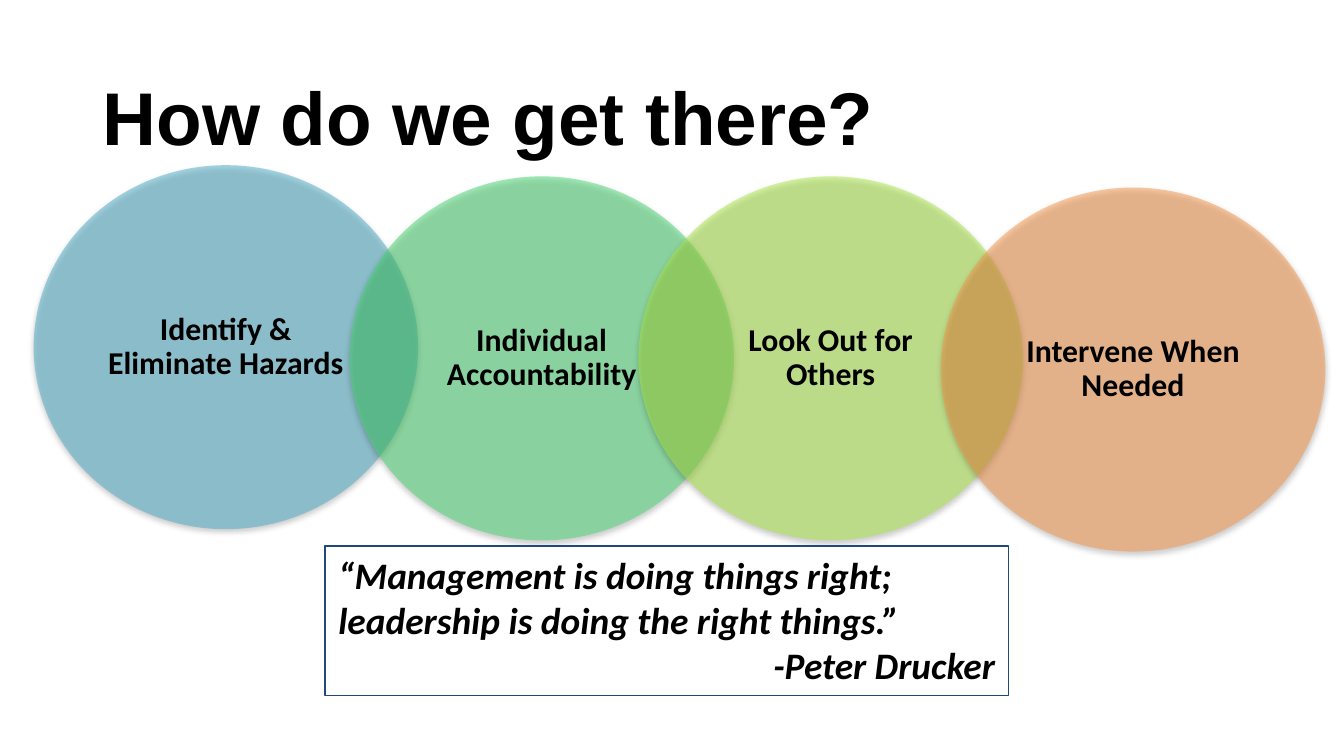
from dataclasses import dataclass

from lxml import etree
from pptx import Presentation
from pptx import util as u
from pptx.dml.color import RGBColor
from pptx.enum import shapes, text
from pptx.oxml.ns import qn

Pt = u.Pt


# Colours, fonts and type sizes
@dataclass(frozen=True)
class Theme:
    ink: str = "000000"
    paper: str = "FFFFFF"
    edge: str = "1F497D"
    head: str = "Arial"
    body: str = "Calibri"
    title: int = 40
    quote: int = 20
    label: int = 17


THEME = Theme()

# Label, fill, left, top
STEPS = [
    ("Identify & Eliminate Hazards", "4BACC6", 18, 88.5),
    ("Individual Accountability", "47D872", 187.2, 94.5),
    ("Look Out for Others", "ACE946", 342, 94.5),
    ("Intervene When Needed", "F79646", 504, 100.5),
]
WIDE, HIGH = 206, 195
INNER = 0.707  # the label fills the square inside the circle

QUOTE = [
    ("“Management is doing things right;", text.PP_ALIGN.LEFT),
    ("leadership is doing the right things.”", text.PP_ALIGN.LEFT),
    ("-Peter Drucker", text.PP_ALIGN.RIGHT),
]


def box(*sides):
    return [Pt(side) for side in sides]


def add_run(para, words, size, face, slant=False):
    run = para.add_run()
    run.text = words
    font = run.font
    font.name, font.size = face, Pt(size)
    font.bold, font.italic = True, slant
    font.color.rgb = RGBColor.from_string(THEME.ink)


def paint(shape, color, alpha=None):
    shape.shadow.inherit = False
    shape.fill.solid()
    shape.fill.fore_color.rgb = RGBColor.from_string(color)
    if alpha is not None:
        tint = shape.fill._xPr.find(qn("a:solidFill"))[0]
        etree.SubElement(tint, qn("a:alpha"), val=str(alpha * 1000))


def add_shade(shape):
    """Soft black shadow straight below the shape."""
    glow = shape._element.spPr.find(qn("a:effectLst"))
    shade = etree.SubElement(
        glow, qn("a:outerShdw"), blurRad=str(Pt(3.1)), dist=str(Pt(1.6)),
        dir="5400000", rotWithShape="0")
    tint = etree.SubElement(shade, qn("a:srgbClr"), val=THEME.ink)
    etree.SubElement(tint, qn("a:alpha"), val="38000")


def add_step(slide, label, color, left, top):
    group = slide.shapes.add_group_shape()
    disc = group.shapes.add_shape(
        shapes.MSO_SHAPE.OVAL, *box(left, top, WIDE, HIGH))
    paint(disc, color, 50)
    disc.line.fill.background()
    add_shade(disc)

    # Label centred on the disc
    wide, high = WIDE * INNER, HIGH * INNER
    note = group.shapes.add_textbox(*box(
        left + (WIDE - wide) / 2, top + (HIGH - high) / 2, wide, high))
    frame = note.text_frame
    frame.word_wrap = True
    frame.vertical_anchor = text.MSO_ANCHOR.MIDDLE
    frame.margin_left = frame.margin_right = Pt(9.4)
    frame.margin_top = frame.margin_bottom = Pt(1.4)
    para = frame.paragraphs[0]
    para.alignment = text.PP_ALIGN.CENTER
    para.line_spacing = 0.9
    add_run(para, label, THEME.label, THEME.body)


def add_quote(slide):
    card = slide.shapes.add_shape(
        shapes.MSO_SHAPE.RECTANGLE, *box(174.2, 292.5, 366, 80))
    paint(card, THEME.paper)
    card.line.color.rgb = RGBColor.from_string(THEME.edge)
    card.line.width = Pt(0.75)
    frame = card.text_frame
    frame.word_wrap = True
    frame.auto_size = text.MSO_AUTO_SIZE.SHAPE_TO_FIT_TEXT
    frame.vertical_anchor = text.MSO_ANCHOR.TOP
    for row, (words, align) in enumerate(QUOTE):
        para = frame.add_paragraph() if row else frame.paragraphs[0]
        para.alignment = align
        add_run(para, words, THEME.quote, THEME.body, slant=True)


def add_title(slide):
    note = slide.shapes.add_textbox(*box(48, 34.5, 480, 55.7))
    frame = note.text_frame
    frame.word_wrap = True
    frame.auto_size = text.MSO_AUTO_SIZE.SHAPE_TO_FIT_TEXT
    add_run(frame.paragraphs[0], "How do we get there?",
            THEME.title, THEME.head)


def main():
    deck = Presentation()
    deck.slide_width, deck.slide_height = box(720, 405)
    slide = deck.slides.add_slide(deck.slide_layouts[6])

    # Overlapping circles, then the quote and the title
    for step in STEPS:
        add_step(slide, *step)
    add_quote(slide)
    add_title(slide)
    deck.save("out.pptx")


if __name__ == "__main__":
    main()
